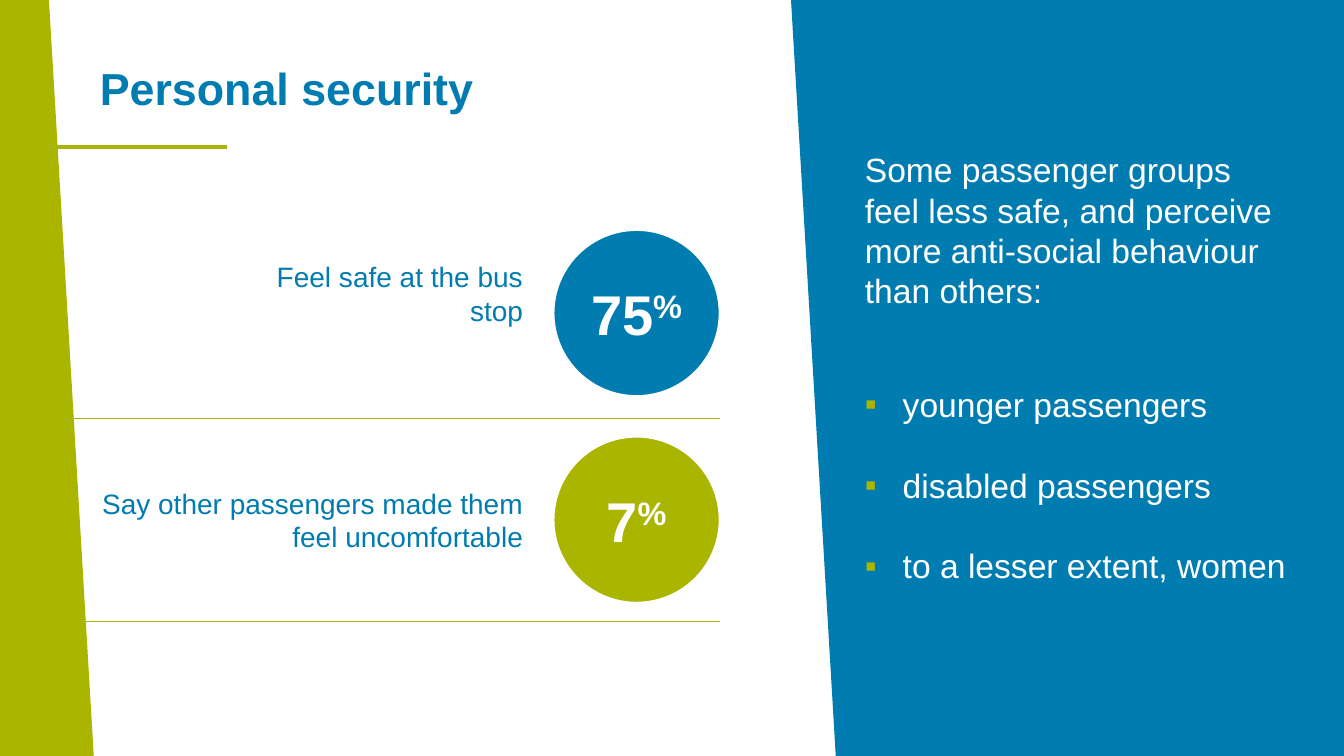
import pptx
import pptx.util
import pptx.dml.color
import pptx.enum.shapes
import pptx.enum.text
import lxml.etree

Pt = pptx.util.Pt
ALIGN = pptx.enum.text.PP_ALIGN
ANCHOR = pptx.enum.text.MSO_ANCHOR
COLOURS = {"blue": "007CB0", "green": "AAB500", "white": "FFFFFF"}
DRAWING = "{http://schemas.openxmlformats.org/drawingml/2006/main}"
WIDTH, HEIGHT = 960, 540


def rgb(name):
    return pptx.dml.color.RGBColor.from_string(COLOURS[name])


def write_text(shape, paragraphs, size=24, colour="white", bold=False, align=ALIGN.LEFT,
               anchor=ANCHOR.BOTTOM, inset=0, line_spacing=None, gap=0, bullet=None,
               superscript=""):
    """Fill the shape with paragraphs; superscript is added to the end of each one."""
    frame = shape.text_frame
    frame.word_wrap = True
    frame.auto_size = pptx.enum.text.MSO_AUTO_SIZE.NONE
    frame.vertical_anchor = anchor
    frame.margin_left = frame.margin_right = Pt(inset)
    frame.margin_top = frame.margin_bottom = Pt(inset / 2)
    for index, text in enumerate(paragraphs):
        paragraph = frame.paragraphs[0] if index == 0 else frame.add_paragraph()
        paragraph.alignment = align
        paragraph.space_before = Pt(gap if index else 0)
        if line_spacing:
            paragraph.line_spacing = Pt(line_spacing)
        if bullet:
            properties = paragraph._p.get_or_add_pPr()
            properties.set("marL", str(Pt(27)))
            properties.set("indent", str(-Pt(27)))
            bullet_colour = lxml.etree.SubElement(properties, DRAWING + "buClr")
            lxml.etree.SubElement(bullet_colour, DRAWING + "srgbClr", val=COLOURS["green"])
            lxml.etree.SubElement(properties, DRAWING + "buFont", typeface="Arial")
            lxml.etree.SubElement(properties, DRAWING + "buChar", char=bullet)
        paragraph.add_run().text = text
        if superscript:
            raised = paragraph.add_run()
            raised.text = superscript
            raised._r.get_or_add_rPr().set("baseline", "30000")
        for run in paragraph.runs:
            run.font.name = "Arial"
            run.font.size = Pt(size)
            run.font.bold = bold
            run.font.color.rgb = rgb(colour)


presentation = pptx.Presentation()
presentation.slide_width = Pt(WIDTH)
presentation.slide_height = Pt(HEIGHT)
slide = presentation.slides.add_slide(presentation.slide_layouts[5])
shapes = slide.shapes

# Title
title = shapes.title
title.left, title.top, title.width, title.height = Pt(71.3), Pt(38.9), Pt(299.5), Pt(43.2)
write_text(title, ["Personal security"], size=32, colour="blue", bold=True)

# Rules: left, right, height on the slide, weight
for left, right, y, weight in [(0, 514, 298.8, 0.5), (0, 514, 443.5, 0.5),
                               (39.6, 162, 105.1, 3)]:
    rule = shapes.add_connector(pptx.enum.shapes.MSO_CONNECTOR.STRAIGHT,
                                Pt(left), Pt(y), Pt(right), Pt(y))
    rule.line.color.rgb = rgb("green")
    rule.line.width = Pt(weight)
    lxml.etree.SubElement(rule._element.spPr, DRAWING + "effectLst")

# Slanted side bands: left and right at the top, left and right at the bottom
for colour, top_left, top_right, bottom_left, bottom_right in [
        ("green", 0, 35.3, 0, 67), ("blue", 565.2, WIDTH, 596.8, WIDTH)]:
    outline = shapes.build_freeform(top_left, 0, scale=Pt(1))
    outline.add_line_segments([(top_right, 0), (bottom_right, HEIGHT), (bottom_left, HEIGHT)])
    band = outline.convert_to_shape()
    band.shadow.inherit = False
    band.fill.solid()
    band.fill.fore_color.rgb = rgb(colour)
    band.line.fill.background()

# Survey results: label and percentage circle
LABEL_RIGHT, LABEL_HEIGHT, DIAMETER = 373.7, 48, 118.8
for label, value, colour, label_width, label_bottom, circle_top in [
        ("Feel safe at the bus stop", "75", "blue", 219, 233.3, 164.2),
        ("Say other passengers made them feel uncomfortable", "7", "green", 311, 395.3, 311.8)]:
    label_box = shapes.add_textbox(Pt(LABEL_RIGHT - label_width), Pt(label_bottom - LABEL_HEIGHT),
                                   Pt(label_width), Pt(LABEL_HEIGHT))
    write_text(label_box, [label], size=20, colour="blue", align=ALIGN.RIGHT, line_spacing=24)
    circle = shapes.add_shape(pptx.enum.shapes.MSO_SHAPE.OVAL, Pt(395.3), Pt(circle_top),
                              Pt(DIAMETER), Pt(DIAMETER))
    circle.shadow.inherit = False
    circle.fill.solid()
    circle.fill.fore_color.rgb = rgb(colour)
    circle.line.color.rgb = rgb("white")
    circle.line.width = Pt(1.5)
    write_text(circle, [value], size=40, bold=True, align=ALIGN.CENTER, anchor=ANCHOR.MIDDLE,
               inset=7.2, superscript="%")

# Passenger groups on the blue band
introduction = shapes.add_textbox(Pt(617.8), Pt(93.6), Pt(302.4), Pt(128.2))
write_text(introduction, ["Some passenger groups feel less safe, and perceive more anti-social "
                          "behaviour than others:"], line_spacing=28.8)
groups = shapes.add_textbox(Pt(617.8), Pt(270), Pt(324), Pt(148.3))
write_text(groups, ["younger passengers", "disabled passengers", "to a lesser extent, women"],
           line_spacing=28.8, gap=28.8, bullet="▪")

presentation.save("out.pptx")
